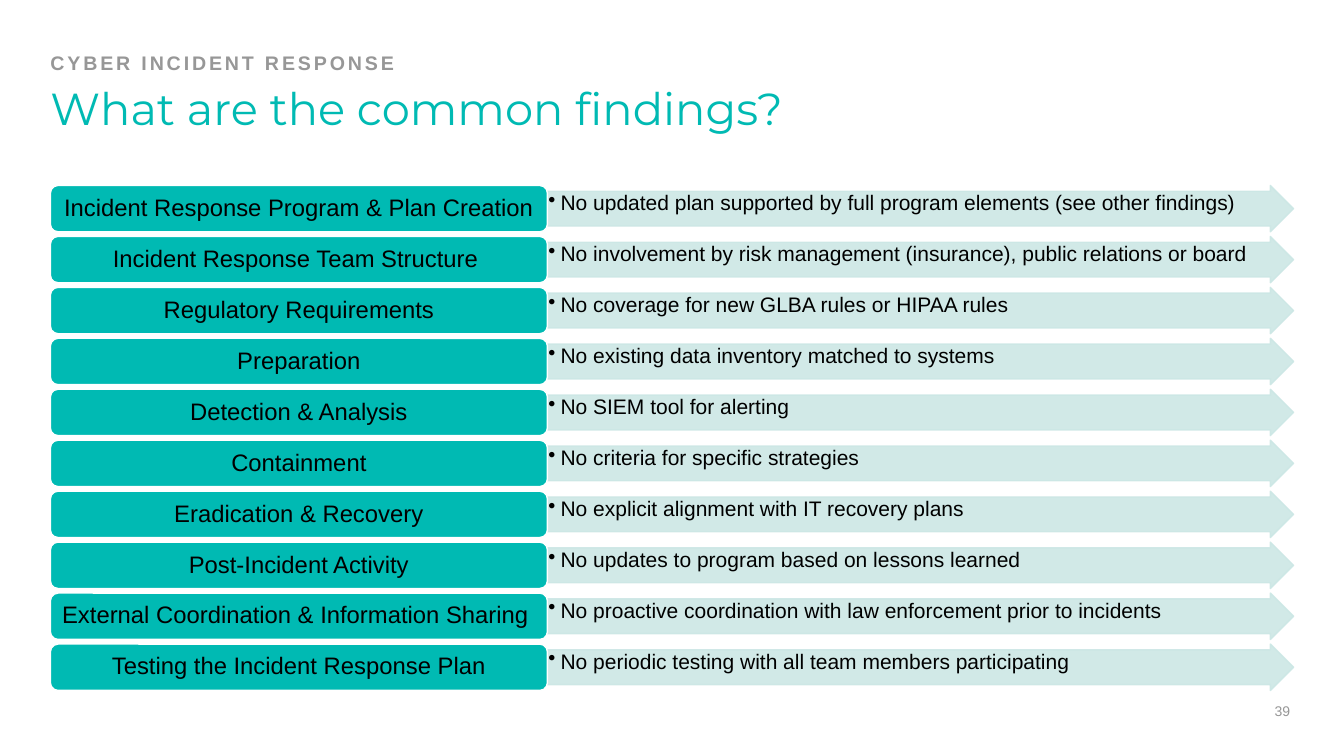
import pptx
import pptx.util
from lxml import etree
from pptx.dml.color import RGBColor
from pptx.enum.shapes import MSO_SHAPE
from pptx.enum.text import MSO_ANCHOR, PP_ALIGN
from pptx.oxml.ns import qn
from pptx.util import Inches

KICKER = "CYBER INCIDENT RESPONSE"
TITLE = "What are the common findings?"
PAGE = "39"
FINDINGS = [
    ("Incident Response Program & Plan Creation",
     "No updated plan supported by full program elements (see other findings)"),
    ("Incident Response Team Structure ",
     "No involvement by risk management (insurance), public relations or board"),
    ("Regulatory Requirements", "No coverage for new GLBA rules or HIPAA rules"),
    ("Preparation", "No existing data inventory matched to systems"),
    ("Detection & Analysis", "No SIEM tool for alerting"),
    ("Containment", "No criteria for specific strategies"),
    ("Eradication & Recovery", "No explicit alignment with IT recovery plans"),
    ("Post-Incident Activity", "No updates to program based on lessons learned"),
    ("External Coordination & Information Sharing ",
     "No proactive coordination with law enforcement prior to incidents"),
    ("Testing the Incident Response Plan",
     "No periodic testing with all team members participating"),
]

TEAL = RGBColor(0x00, 0xBA, 0xB3)
PALE_TEAL = RGBColor(0xCC, 0xE7, 0xE5)
GRAY = RGBColor(0x97, 0x97, 0x97)
BLACK = RGBColor(0x00, 0x00, 0x00)
WHITE = RGBColor(0xFF, 0xFF, 0xFF)

LEFT, TOPIC_WIDTH, ARROW_WIDTH = 0.5, 4.93, 7.4
FIRST_TOP, LAST_TOP, ROW_HEIGHT = 1.84, 6.39, 0.46


def write(shape, text, *, size, color, font="Arial", bold=False, align=PP_ALIGN.LEFT,
          anchor=MSO_ANCHOR.TOP, insets=(0, 0, 0, 0), line_spacing=0.9,
          tracking=None, bullet_indent=None):
    """Put one formatted paragraph of text into a shape."""
    frame = shape.text_frame
    frame.word_wrap = True
    frame.vertical_anchor = anchor
    (frame.margin_left, frame.margin_top,
     frame.margin_right, frame.margin_bottom) = map(Inches, insets)
    paragraph = frame.paragraphs[0]
    paragraph.alignment = align
    paragraph.line_spacing = line_spacing
    paragraph.space_before = pptx.util.Pt(0)
    if bullet_indent:
        paragraph.level = 1
        properties = paragraph._p.get_or_add_pPr()
        properties.set("marL", str(Inches(bullet_indent)))
        properties.set("indent", str(-Inches(bullet_indent)))
        etree.SubElement(properties, qn("a:buChar"), char="•")
    run = paragraph.add_run()
    run.text = text
    run.font.size = pptx.util.Pt(size)
    run.font.name = font
    run.font.bold = bold
    run.font.color.rgb = color
    if tracking:
        run.font._element.set("spc", str(tracking * 100))


def add_block(slide, preset, left, top, width, fill, outline, opacity=None):
    """Add one filled, outlined shape of a findings row."""
    block = slide.shapes.add_shape(
        preset, Inches(left), Inches(top), Inches(width), Inches(ROW_HEIGHT))
    block.shadow.inherit = False
    block.fill.solid()
    block.fill.fore_color.rgb = fill
    block.line.color.rgb = outline
    block.line.width = pptx.util.Pt(1)
    if opacity:
        for color in block._element.spPr.iter(qn("a:srgbClr")):
            etree.SubElement(color, qn("a:alpha"), val=str(opacity * 1000))
    return block


def main():
    """Build the common findings slide."""
    deck = pptx.Presentation()
    deck.slide_width, deck.slide_height = Inches(13.33), Inches(7.5)
    slide = deck.slides.add_slide(deck.slide_layouts[5])

    title = slide.shapes.title
    title.left, title.top = Inches(LEFT), Inches(0.76)
    title.width, title.height = Inches(12.33), Inches(0.59)
    write(title, TITLE, size=32, color=TEAL, font="Montserrat", insets=(0, 0.1, 0, 0))

    kicker = slide.shapes.add_textbox(
        Inches(LEFT), Inches(0.53), Inches(12.33), Inches(0.21))
    write(kicker, KICKER, size=14, color=GRAY, bold=True,
          anchor=MSO_ANCHOR.BOTTOM, tracking=2)

    page = slide.shapes.add_textbox(
        Inches(12.52), Inches(6.97), Inches(0.4), Inches(0.17))
    write(page, PAGE, size=10, color=GRAY, align=PP_ALIGN.CENTER,
          anchor=MSO_ANCHOR.MIDDLE, line_spacing=1.0)

    pitch = (LAST_TOP - FIRST_TOP) / (len(FINDINGS) - 1)
    for row, (topic, finding) in enumerate(FINDINGS):
        top = FIRST_TOP + row * pitch
        arrow = add_block(slide, MSO_SHAPE.RIGHT_ARROW, LEFT + TOPIC_WIDTH, top,
                          ARROW_WIDTH, PALE_TEAL, PALE_TEAL, opacity=90)
        arrow.adjustments[0] = 0.75
        arrow.adjustments[1] = 0.5
        write(arrow, finding, size=15, color=BLACK, insets=(0.01,) * 4,
              bullet_indent=0.12)
        label = add_block(slide, MSO_SHAPE.ROUNDED_RECTANGLE, LEFT, top,
                          TOPIC_WIDTH, TEAL, WHITE)
        write(label, topic, size=17, color=BLACK, align=PP_ALIGN.CENTER,
              anchor=MSO_ANCHOR.MIDDLE, insets=(0.07, 0.04, 0.07, 0.04))

    deck.save("out.pptx")


if __name__ == "__main__":
    main()
